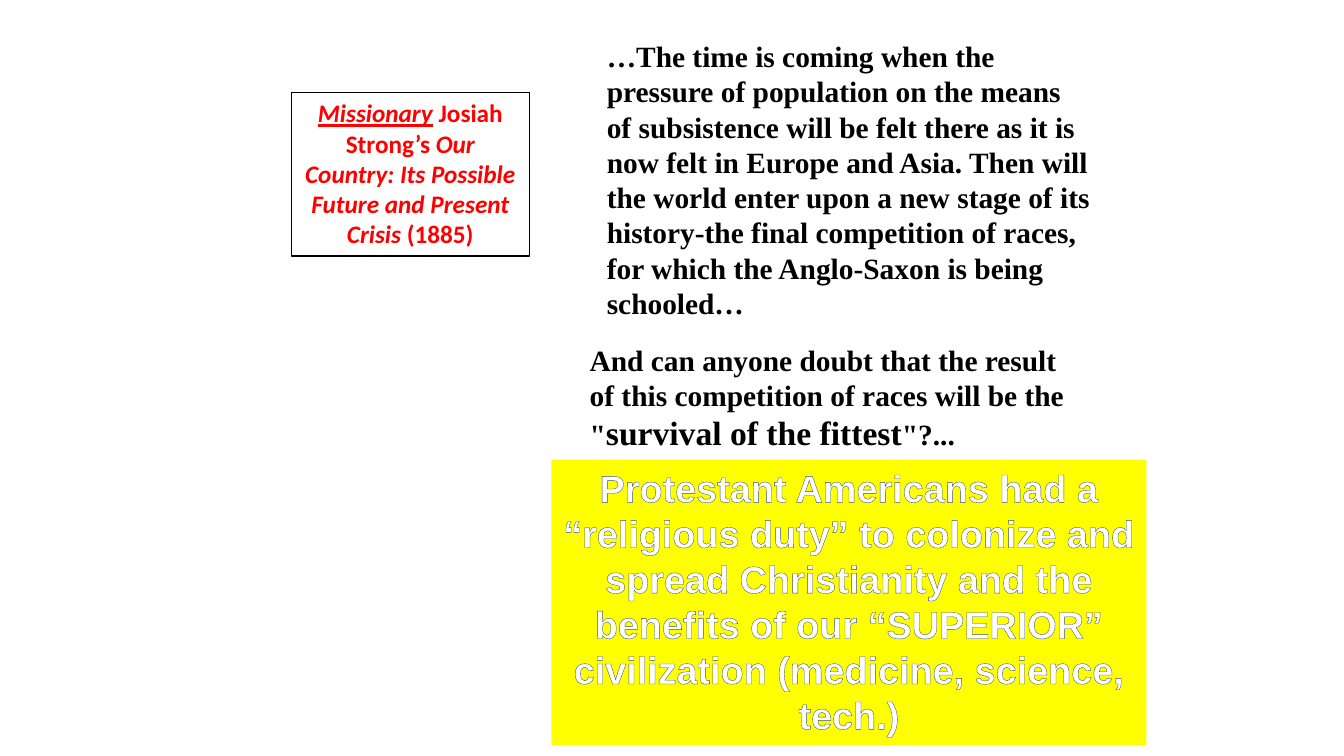
from lxml import etree
from pptx import Presentation
from pptx.dml.color import RGBColor
from pptx.enum.shapes import MSO_SHAPE
from pptx.enum.text import MSO_ANCHOR, PP_ALIGN
from pptx.oxml.ns import qn
from pptx.util import Inches, Pt

COLORS = {
    "black": "000000",
    "white": "FFFFFF",
    "red": "FF0000",
    "yellow": "FFFF00",
    "outline": "3A5274",
}


def color(name):
    return RGBColor.from_string(COLORS[name])


def add_run(paragraph, text, size, font_name, color_name, italic=False, underline=False):
    run = paragraph.add_run()
    run.text = text
    font = run.font
    font.size = Pt(size)
    font.name = font_name
    font.bold = True
    font.italic = italic
    font.underline = underline
    font.color.rgb = color(color_name)
    return run


def outline_run(run, color_name, width):
    line = etree.Element(qn("a:ln"), w=str(Pt(width)))
    fill = etree.SubElement(line, qn("a:solidFill"))
    etree.SubElement(fill, qn("a:srgbClr"), val=COLORS[color_name])
    run.font._element.insert(0, line)


def add_quote(slide, left, top, width, height, pieces):
    box = slide.shapes.add_textbox(Inches(left), Inches(top), Inches(width), Inches(height))
    box.text_frame.word_wrap = True
    paragraph = box.text_frame.paragraphs[0]
    for text, size in pieces:
        add_run(paragraph, text, size, "Times New Roman", "black")


def add_panel(slide, left, top, width, height, fill, line=None):
    shape = slide.shapes.add_shape(
        MSO_SHAPE.RECTANGLE, Inches(left), Inches(top), Inches(width), Inches(height)
    )
    shape.shadow.inherit = False
    shape.fill.solid()
    shape.fill.fore_color.rgb = color(fill)
    if line:
        shape.line.color.rgb = color(line)
        shape.line.width = Pt(1)
    else:
        shape.line.fill.background()
    shape.text_frame.word_wrap = True
    shape.text_frame.vertical_anchor = MSO_ANCHOR.TOP
    paragraph = shape.text_frame.paragraphs[0]
    paragraph.alignment = PP_ALIGN.CENTER
    return paragraph


def add_source(slide):
    paragraph = add_panel(slide, 2.89, 0.92, 2.36, 1.62, "white", "black")
    pieces = [
        ("Missionary", True, True),
        (" Josiah Strong’s ", False, False),
        ("Our Country: Its Possible Future and Present Crisis ", True, False),
        ("(1885)", False, False),
    ]
    for text, italic, underline in pieces:
        add_run(paragraph, text, 18, "Calibri", "red", italic, underline)


def add_summary(slide):
    paragraph = add_panel(slide, 5.47, 4.56, 5.9, 2.83, "yellow")
    run = add_run(
        paragraph,
        "Protestant Americans had a “religious duty” to colonize and spread Christianity "
        "and the benefits of our “SUPERIOR” civilization (medicine, science, tech.)",
        27, "Arial", "white",
    )
    outline_run(run, "outline", 1)


def main():
    presentation = Presentation()
    presentation.slide_width = Inches(13.33)
    presentation.slide_height = Inches(7.5)
    slide = presentation.slides.add_slide(presentation.slide_layouts[6])
    add_quote(slide, 5.92, 0.33, 5, 2.93, [
        ("…The time is coming when the pressure of population on the means of subsistence "
         "will be felt there as it is now felt in Europe and Asia. Then will the world enter "
         "upon a new stage of its history-the final competition of races, for which the "
         "Anglo-Saxon is being schooled…", 21),
    ])
    add_quote(slide, 5.75, 3.34, 5, 1.21, [
        ("And can anyone doubt that the result of this competition of races will be the \"", 21),
        ("survival of the fittest", 24),
        ("\"?...", 21),
    ])
    add_source(slide)
    add_summary(slide)
    presentation.save("out.pptx")


if __name__ == "__main__":
    main()
